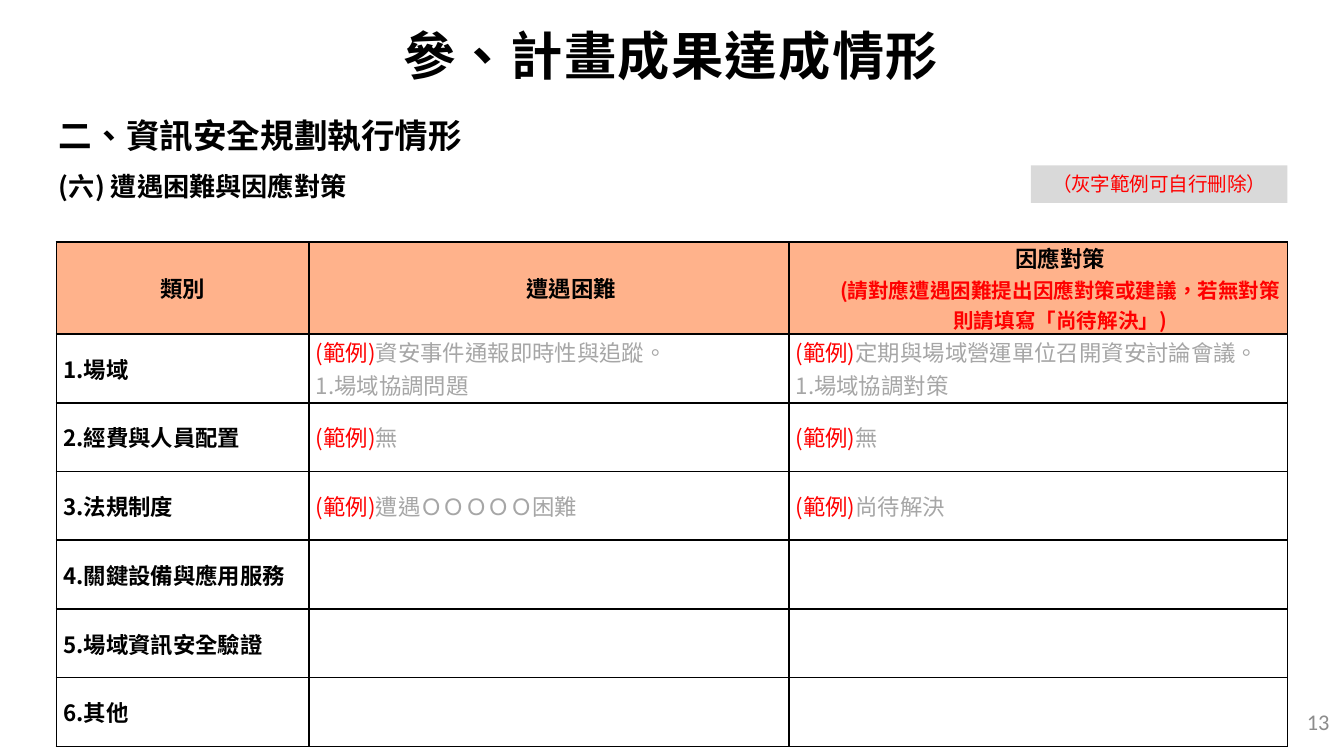
from lxml import etree
from pptx import Presentation
from pptx.dml.color import RGBColor
from pptx.enum.shapes import MSO_SHAPE
from pptx.enum.text import MSO_ANCHOR, PP_ALIGN
from pptx.oxml.ns import qn
from pptx.util import Inches, Pt

RECTANGLE = MSO_SHAPE.RECTANGLE
LEFT, CENTER, RIGHT, JUSTIFY = PP_ALIGN.LEFT, PP_ALIGN.CENTER, PP_ALIGN.RIGHT, PP_ALIGN.JUSTIFY
TOP, MIDDLE = MSO_ANCHOR.TOP, MSO_ANCHOR.MIDDLE
FONT, LANGUAGE = "Noto Sans CJK SC", "zh-TW"
BLACK, RED, GREY = "000000", "FF0000", "A6A6A6"
HEADER_FILL, NOTE_FILL = "FFB28B", "D9D9D9"

TITLE = "參、計畫成果達成情形"
SECTION = "二、資訊安全規劃執行情形"
SUBSECTION = "(六) 遭遇困難與因應對策"
NOTE = "（灰字範例可自行刪除）"
PAGE = "13"
EXAMPLE = "(範例)"
HEADERS = [
    ["類別"],
    ["遭遇困難"],
    ["因應對策", "(請對應遭遇困難提出因應對策或建議，若無對策則請填寫「尚待解決」)"],
]
ROWS = [
    ("1.場域", ["資安事件通報即時性與追蹤。", "場域協調問題"],
     ["定期與場域營運單位召開資安討論會議。", "場域協調對策"]),
    ("2.經費與人員配置", ["無"], ["無"]),
    ("3.法規制度", ["遭遇ＯＯＯＯＯ困難"], ["尚待解決"]),
    ("4.關鍵設備與應用服務", [], []),
    ("5.場域資訊安全驗證", [], []),
    ("6.其他", [], []),
]
COL_WIDTHS = [1.88, 3.57, 3.71]
TABLE_HEIGHT, HEADER_HEIGHT = 3.67, 0.6
ROW_HEIGHT = (TABLE_HEIGHT - HEADER_HEIGHT) / len(ROWS)


def rgb(value):
    return RGBColor.from_string(value)


def add_run(p, text, size, color=BLACK, bold=False, font=FONT):
    r = p.add_run()
    r.text = text
    r.font.size = Pt(size)
    r.font.bold = bold
    r.font.name = font
    r.font.color.rgb = rgb(color)
    rPr = r._r.get_or_add_rPr()
    rPr.set("lang", LANGUAGE)
    etree.SubElement(rPr, qn("a:ea")).set("typeface", font)
    return r


def add_paragraph(tf, first, align, indent=0):
    p = tf.paragraphs[0] if first else tf.add_paragraph()
    p.alignment = align
    if indent:
        pPr = p._p.get_or_add_pPr()
        pPr.set("marL", str(Inches(indent)))
        pPr.set("indent", "0")
    return p


def add_number(p):
    pPr = p._p.get_or_add_pPr()
    pPr.set("marL", "0")
    pPr.set("indent", "0")
    etree.SubElement(pPr, qn("a:buFont")).set("typeface", "+mj-lt")
    etree.SubElement(pPr, qn("a:buAutoNum")).set("type", "arabicPeriod")


def add_text(s, box, text, size, align=LEFT, anchor=MIDDLE, **style):
    sp = s.shapes.add_textbox(*map(Inches, box))
    tf = sp.text_frame
    tf.word_wrap = True
    tf.vertical_anchor = anchor
    add_run(add_paragraph(tf, True, align), text, size, **style)


def format_cell(cell, fill=None):
    cell.vertical_anchor = MIDDLE
    cell.margin_left = cell.margin_right = Inches(0.05)
    cell.margin_top = cell.margin_bottom = 0
    tcPr = cell._tc.get_or_add_tcPr()
    for side in ("a:lnL", "a:lnR", "a:lnT", "a:lnB"):
        ln = etree.SubElement(tcPr, qn(side), w=str(Pt(1)))
        solid = etree.SubElement(ln, qn("a:solidFill"))
        etree.SubElement(solid, qn("a:srgbClr"), val=BLACK)
    if fill:
        cell.fill.solid()
        cell.fill.fore_color.rgb = rgb(fill)
    else:
        cell.fill.background()


def fill_example(cell, lines):
    for i, line in enumerate(lines):
        p = add_paragraph(cell.text_frame, i == 0, JUSTIFY)
        if i == 0:
            add_run(p, EXAMPLE, 12, RED)
        else:
            add_number(p)
        add_run(p, line, 12, GREY)


def add_difficulty_table(s):
    box = (0.42, 1.8, sum(COL_WIDTHS), TABLE_HEIGHT)
    table = s.shapes.add_table(len(ROWS) + 1, len(COL_WIDTHS), *map(Inches, box)).table
    table.first_row = table.horz_banding = False
    for col, width in zip(table.columns, COL_WIDTHS):
        col.width = Inches(width)
    for i, row in enumerate(table.rows):
        row.height = Inches(ROW_HEIGHT if i else HEADER_HEIGHT)
        for cell in row.cells:
            format_cell(cell, None if i else HEADER_FILL)
    for c, lines in enumerate(HEADERS):
        for i, line in enumerate(lines):
            p = add_paragraph(table.cell(0, c).text_frame, i == 0, CENTER, 0.33 if c else 0)
            add_run(p, line, 11 if i else 12, RED if i else BLACK, True)
    for i, (category, *examples) in enumerate(ROWS, 1):
        p = add_paragraph(table.cell(i, 0).text_frame, True, LEFT)
        add_run(p, category, 12, bold=True)
        for c, lines in enumerate(examples, 1):
            fill_example(table.cell(i, c), lines)


def add_note(s):
    sp = s.shapes.add_shape(RECTANGLE, *map(Inches, (7.67, 1.23, 1.91, 0.28)))
    sp.shadow.inherit = False
    sp.fill.solid()
    sp.fill.fore_color.rgb = rgb(NOTE_FILL)
    sp.line.fill.background()
    tf = sp.text_frame
    tf.word_wrap = True
    tf.vertical_anchor = TOP
    add_run(add_paragraph(tf, True, CENTER), NOTE, 10.5, RED)


def add_title(s):
    sp = s.shapes.title
    sp.left, sp.top, sp.width, sp.height = map(Inches, (-0.01, -0.02, 10, 0.85))
    tf = sp.text_frame
    tf.vertical_anchor = MIDDLE
    tf.margin_left = tf.margin_right = Inches(0.07)
    tf.margin_top = tf.margin_bottom = Inches(0.04)
    r = add_run(add_paragraph(tf, True, CENTER), TITLE, 28, bold=True)
    r._r.get_or_add_rPr().set("spc", "80")


def main():
    prs = Presentation()
    prs.slide_width = Inches(10)
    prs.slide_height = prs.slide_width * 9 // 16
    s = prs.slides.add_slide(prs.slide_layouts[5])
    add_title(s)
    add_difficulty_table(s)
    add_note(s)
    add_text(s, (7.74, 5.22, 2.25, 0.3), PAGE, 12, RIGHT, color="8C8C8C", font="Calibri")
    add_text(s, (0.34, 1.22, 7.39, 0.33), SUBSECTION, 14, bold=True)
    add_text(s, (0.34, 0.81, 9.17, 0.4), SECTION, 18, anchor=TOP, bold=True)
    prs.save("out.pptx")


if __name__ == "__main__":
    main()
